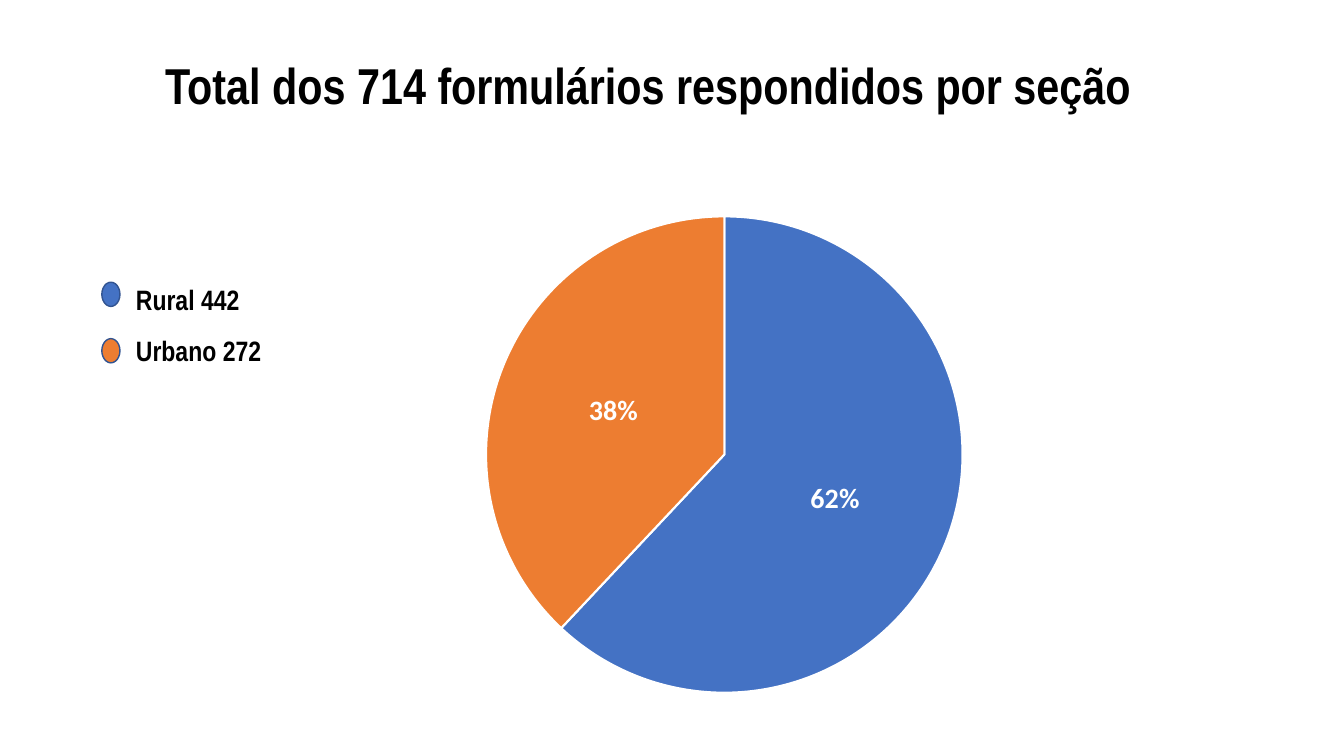
import dataclasses
import pptx
import pptx.chart.data
import pptx.dml.color
import pptx.enum.chart
import pptx.enum.shapes
import pptx.enum.text
import pptx.oxml
import pptx.oxml.ns
import pptx.slide
import pptx.text.text
import pptx.util

Inches = pptx.util.Inches
Pt = pptx.util.Pt
COLORS = {
    "black": "000000",
    "white": "FFFFFF",
    "blue": "4472C4",
    "orange": "ED7D31",
    "edge": "325491",
}


@dataclasses.dataclass(frozen=True)
class Box:
    left: float
    top: float
    width: float
    height: float

    def place(self) -> tuple[int, int, int, int]:
        return (Inches(self.left), Inches(self.top),
                Inches(self.width), Inches(self.height))


@dataclasses.dataclass(frozen=True)
class Sector:
    label: str
    percent: int
    color: str


TITLE = "Total dos 714 formulários respondidos por seção"
SECTORS = [
    Sector("Rural 442", 62, "blue"),
    Sector("Urbano 272", 38, "orange"),
]


def tint(name: str) -> pptx.dml.color.RGBColor:
    return pptx.dml.color.RGBColor.from_string(COLORS[name])


def style(font: pptx.text.text.Font, face: str, size: int,
          color: str, bold: bool) -> None:
    font.name = face
    font.size = Pt(size)
    font.bold = bold
    font.color.rgb = tint(color)


def add_text(slide: pptx.slide.Slide, box: Box, lines: list[str], size: int,
             space: float, align: pptx.enum.text.PP_ALIGN,
             anchor: pptx.enum.text.MSO_ANCHOR) -> None:
    frame = slide.shapes.add_textbox(*box.place()).text_frame
    frame.word_wrap = True
    frame.vertical_anchor = anchor
    for index, line in enumerate(lines):
        para = frame.add_paragraph() if index else frame.paragraphs[0]
        para.alignment = align
        para.line_spacing = space
        run = para.add_run()
        run.text = line
        style(run.font, "Arial Narrow", size, "black", True)


def add_pie(slide: pptx.slide.Slide, box: Box) -> None:
    data = pptx.chart.data.CategoryChartData()
    data.categories = [str(n) for n in range(1, len(SECTORS) + 1)]
    data.add_series("Series 1", [sector.percent for sector in SECTORS])
    chart = slide.shapes.add_chart(
        pptx.enum.chart.XL_CHART_TYPE.PIE, *box.place(), data).chart
    chart.has_title = False
    chart.has_legend = False
    style(chart.font, "Calibri", 10, "black", False)
    plot = chart.plots[0]
    plot.vary_by_categories = True
    for index, sector in enumerate(SECTORS):
        part = plot.series[0].points[index].format
        part.fill.solid()
        part.fill.fore_color.rgb = tint(sector.color)
        part.line.color.rgb = tint("white")
        part.line.width = Pt(1.5)
    labels = plot.series[0].data_labels
    labels.show_value = False
    labels.show_percentage = True
    labels.number_format = "0%"
    labels.number_format_is_linked = False
    labels.position = pptx.enum.chart.XL_LABEL_POSITION.CENTER
    style(labels.font, "Calibri", 20, "white", True)
    set_plot(chart, box, 4.73)


def set_plot(chart: pptx.chart.chart.Chart, box: Box, size: float) -> None:
    wide, high = size / box.width, size / box.height
    area = chart.element.find(".//" + pptx.oxml.ns.qn("c:plotArea"))
    for old in area.findall(pptx.oxml.ns.qn("c:layout")):
        area.remove(old)
    area.insert(0, pptx.oxml.parse_xml(
        f'<c:layout {pptx.oxml.ns.nsdecls("c")}><c:manualLayout>'
        '<c:layoutTarget val="inner"/>'
        '<c:xMode val="edge"/><c:yMode val="edge"/>'
        f'<c:x val="{(1 - wide) / 2:.3f}"/><c:y val="{(1 - high) / 2:.3f}"/>'
        f'<c:w val="{wide:.3f}"/><c:h val="{high:.3f}"/>'
        '</c:manualLayout></c:layout>'))


def add_dot(slide: pptx.slide.Slide, box: Box, color: str) -> None:
    dot = slide.shapes.add_shape(
        pptx.enum.shapes.MSO_SHAPE.OVAL, *box.place())
    dot.shadow.inherit = False
    dot.fill.solid()
    dot.fill.fore_color.rgb = tint(color)
    dot.line.color.rgb = tint("edge")
    dot.line.width = Pt(1)


def main() -> None:
    deck = pptx.Presentation()
    deck.slide_width = Inches(13.33)
    deck.slide_height = Inches(7.5)
    slide = deck.slides.add_slide(deck.slide_layouts[6])
    align = pptx.enum.text.PP_ALIGN
    anchor = pptx.enum.text.MSO_ANCHOR
    add_text(slide, Box(0.68, 0.15, 11.5, 1.45), [TITLE], 36, 0.9,
             align.CENTER, anchor.MIDDLE)
    add_pie(slide, Box(1.44, 2, 11.5, 5.02))
    add_text(slide, Box(1.25, 2.59, 1.51, 1.05),
             [sector.label for sector in SECTORS], 20, 1.5,
             align.LEFT, anchor.TOP)
    for index, sector in enumerate(SECTORS):
        add_dot(slide, Box(1.01, 2.8 + 0.56 * index, 0.18, 0.24),
                sector.color)
    deck.save("out.pptx")


if __name__ == "__main__":
    main()
